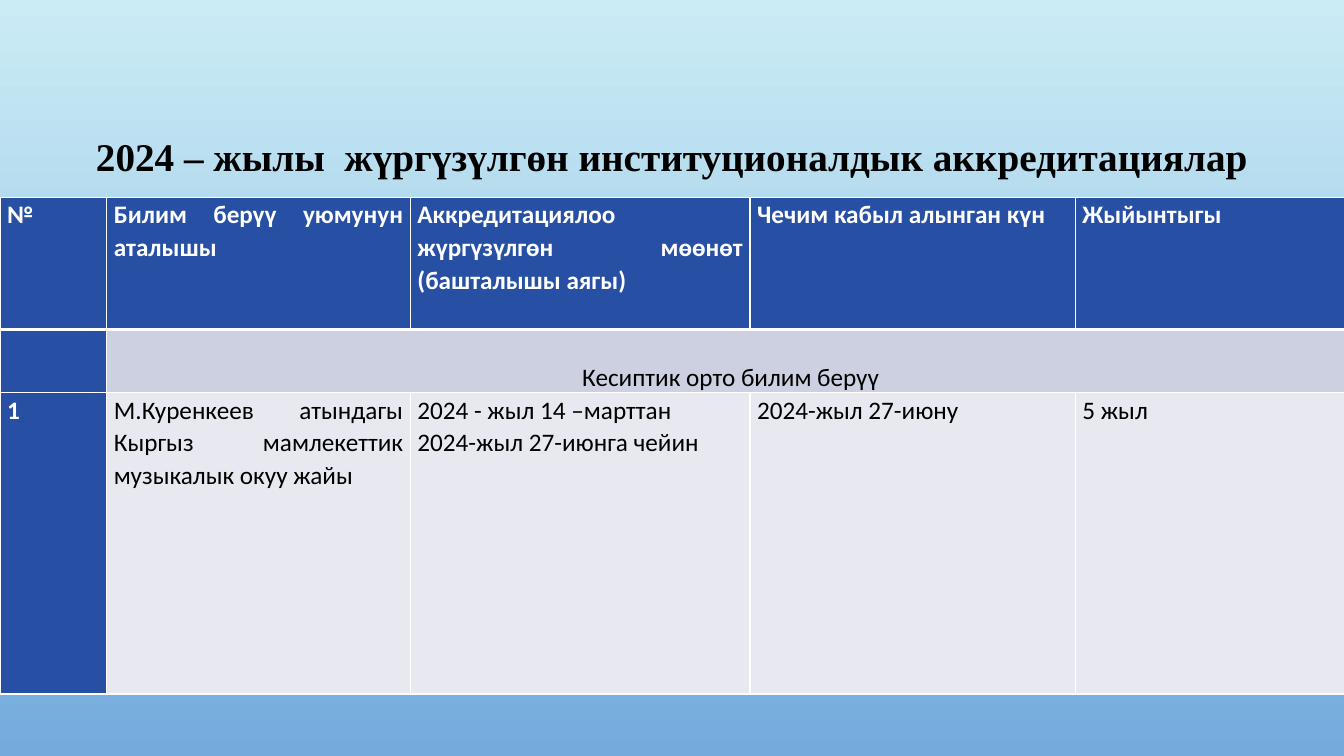
from pptx import Presentation, util as u
from pptx.dml import color
from pptx.enum import text
from pptx.oxml import parse_xml
from pptx.oxml.ns import nsdecls

Cm, Pt = u.Cm, u.Pt
ALIGN, ANCHOR = text.PP_ALIGN, text.MSO_ANCHOR
NAVY, LILAC, PALE = "274FA4", "CDD0E0", "E8E9F0"
BLACK, WHITE = "000000", "FFFFFF"

COLS = [2.69, 7.65, 8.56, 8.2, 7.04]
ROWS = [3.32, 1.6, 7.59]
DATA = [
    ["№", "Билим берүү уюмунун аталышы",
     "Аккредитациялоо жүргүзүлгөн мөөнөт (башталышы аягы)",
     "Чечим кабыл алынган күн", "Жыйынтыгы"],
    ["", "Кесиптик орто билим берүү", "", "", ""],
    ["1", "М.Куренкеев атындагы Кыргыз мамлекеттик музыкалык окуу жайы",
     "2024 - жыл 14 –марттан\n2024-жыл 27-июнга чейин",
     "2024-жыл 27-июну", "5 жыл"],
]


def rgb(code):
    return color.RGBColor.from_string(code)


def write(frame, words, font="Calibri", size=18, ink=BLACK, bold=False,
          align=ALIGN.JUSTIFY, line=1.07):
    frame.text = words
    for para in frame.paragraphs:
        para.alignment = align
        para.line_spacing = line
        for item in [para, *para.runs]:
            face = item.font
            face.name, face.size, face.bold = font, Pt(size), bold
            face.color.rgb = rgb(ink)


def edge(cell, side, width):
    cell._tc.get_or_add_tcPr().append(parse_xml(
        f'<a:ln{side} {nsdecls("a")} w="{Pt(width)}"><a:solidFill>'
        f'<a:srgbClr val="{WHITE}"/></a:solidFill></a:ln{side}>'))


def paint(slide):
    fill = slide.background.fill
    fill.gradient()
    fill.gradient_angle = 270
    for stop, code in zip(fill.gradient_stops, ["CBECF5", "73ABDD"]):
        stop.color.rgb = rgb(code)


def title(slide, left, top, width, height):
    frame = slide.shapes.add_textbox(
        Cm(left), Cm(top), Cm(width), Cm(height)).text_frame
    frame.word_wrap = False
    frame.vertical_anchor = ANCHOR.MIDDLE
    write(frame, "2024 – жылы  жүргүзүлгөн институционалдык аккредитациялар",
          font="Times New Roman", size=28, bold=True,
          align=ALIGN.CENTER, line=1.0)


def grid(slide, left, top):
    table = slide.shapes.add_table(
        len(ROWS), len(COLS), Cm(left), Cm(top),
        Cm(sum(COLS)), Cm(sum(ROWS))).table
    for col, width in zip(table.columns, COLS):
        col.width = Cm(width)
    for row, height in zip(table.rows, ROWS):
        row.height = Cm(height)

    # The section row spans every column after the number
    table.cell(1, 1).merge(table.cell(1, len(COLS) - 1))

    for r, line in enumerate(DATA):
        for c, words in enumerate(line):
            cell = table.cell(r, c)
            head, band = r == 0 or c == 0, r == 1
            # Borders go before the fill; a thick rule closes the header
            for side in "LRTB":
                thick = (r, side) in [(0, "B"), (1, "T")]
                edge(cell, side, 3 if thick else 1)
            cell.fill.solid()
            cell.fill.fore_color.rgb = rgb(
                NAVY if head else LILAC if band else PALE)
            cell.margin_left = cell.margin_right = Cm(0.18)
            cell.margin_top = cell.margin_bottom = 0
            cell.vertical_anchor = ANCHOR.BOTTOM if band else ANCHOR.TOP
            write(cell.text_frame, words, bold=head,
                  ink=WHITE if head else BLACK,
                  align=ALIGN.CENTER if band else ALIGN.JUSTIFY)


def main():
    deck = Presentation()
    deck.slide_width, deck.slide_height = Cm(33.87), Cm(19.05)
    slide = deck.slides.add_slide(deck.slide_layouts[6])
    paint(slide)
    grid(slide, 0, 4.98)
    title(slide, 2, 3.2, 29.85, 1.45)
    deck.save("out.pptx")


if __name__ == "__main__":
    main()
